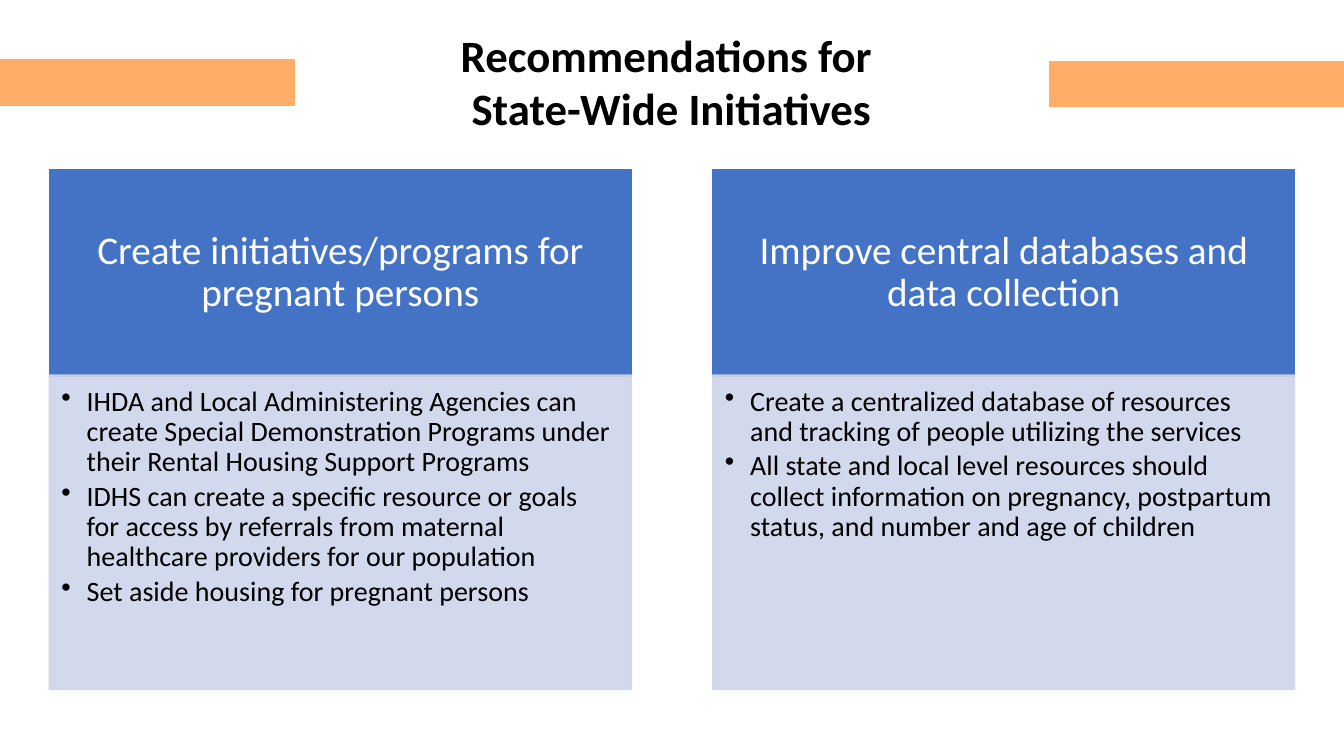
from dataclasses import dataclass

from lxml.etree import SubElement
from pptx import Presentation
from pptx.dml.color import RGBColor
from pptx.enum.shapes import MSO_SHAPE
from pptx.enum.text import MSO_ANCHOR, MSO_AUTO_SIZE, PP_ALIGN
from pptx.oxml.ns import qn
from pptx.util import Inches, Pt

COLORS = {
    "white": "FFFFFF",
    "black": "000000",
    "header": "4472C4",
    "body": "CFD5EA",
    "accent": "FFAD68",
}
FONT = "Calibri"
COLUMN_W, HEADER_H, BODY_H = 5.77, 2.05, 3.12
HEADER_TOP, BODY_TOP = 1.68, 3.72
BAR_W, BAR_H = 2.92, 0.45


@dataclass
class Column:
    left: float
    heading: str
    bullets: list[str]


@dataclass
class Bar:
    left: float
    top: float


COLUMNS = [
    Column(0.49, "Create initiatives/programs for pregnant persons", [
        "IHDA and Local Administering Agencies can create Special Demonstration "
        "Programs under their Rental Housing Support Programs",
        "IDHS can create a specific resource or goals for access by referrals "
        "from maternal healthcare providers for our population",
        "Set aside housing for pregnant persons",
    ]),
    Column(7.07, "Improve central databases and data collection", [
        "Create a centralized database of resources and tracking of people "
        "utilizing the services",
        "All state and local level resources should collect information on "
        "pregnancy, postpartum status, and number and age of children",
    ]),
]
BARS = [Bar(0, 0.59), Bar(10.41, 0.61)]


def rgb(name: str) -> RGBColor:
    return RGBColor.from_string(COLORS[name])


def add_rect(slide, left: float, top: float, width: float, height: float,
             color: str, opacity: int = 100):
    sp = slide.shapes.add_shape(MSO_SHAPE.RECTANGLE, Inches(left), Inches(top),
                                Inches(width), Inches(height))
    sp.shadow.inherit = False
    sp.fill.solid()
    sp.fill.fore_color.rgb = rgb(color)
    sp.line.color.rgb = rgb(color)
    sp.line.width = Pt(1)
    if opacity < 100:
        for clr in sp._element.spPr.iter(qn("a:srgbClr")):
            SubElement(clr, qn("a:alpha")).set("val", str(opacity * 1000))
    return sp


def set_frame(tf, anchor: MSO_ANCHOR, insets: tuple[float, float, float, float]) -> None:
    tf.word_wrap = True
    tf.auto_size = MSO_AUTO_SIZE.NONE
    tf.vertical_anchor = anchor
    tf.margin_left, tf.margin_top, tf.margin_right, tf.margin_bottom = map(Inches, insets)


def add_paragraphs(tf, texts: list[str], size: int, color: str, align: PP_ALIGN,
                   spacing: float, bold: bool = False, bullet: bool = False) -> None:
    for i, text in enumerate(texts):
        p = tf.paragraphs[0] if i == 0 else tf.add_paragraph()
        p.alignment = align
        p.line_spacing = spacing
        if bullet:
            p.space_after = Pt(3)
            pPr = p._p.get_or_add_pPr()
            pPr.set("marL", str(Inches(0.25)))
            pPr.set("indent", str(Inches(-0.25)))
            SubElement(pPr, qn("a:buChar")).set("char", "•")
        r = p.add_run()
        r.text = text
        r.font.name = FONT
        r.font.size = Pt(size)
        r.font.bold = bold
        r.font.color.rgb = rgb(color)


def add_title(slide) -> None:
    title = slide.shapes.title
    title.left, title.top = Inches(2.92), Inches(0.22)
    title.width, title.height = Inches(7.48), Inches(1.18)
    title.fill.solid()
    title.fill.fore_color.rgb = rgb("white")
    set_frame(title.text_frame, MSO_ANCHOR.TOP, (0.1, 0.05, 0.1, 0.05))
    add_paragraphs(title.text_frame, ["Recommendations for ", "State-Wide Initiatives"],
                   32, "black", PP_ALIGN.CENTER, 1.0, bold=True)


def add_column(slide, col: Column) -> None:
    header = add_rect(slide, col.left, HEADER_TOP, COLUMN_W, HEADER_H, "header")
    set_frame(header.text_frame, MSO_ANCHOR.MIDDLE, (0.22, 0.12, 0.22, 0.12))
    add_paragraphs(header.text_frame, [col.heading], 28, "white", PP_ALIGN.CENTER, 0.9)

    body = add_rect(slide, col.left, BODY_TOP, COLUMN_W, BODY_H, "body", opacity=90)
    set_frame(body.text_frame, MSO_ANCHOR.TOP, (0.12, 0.12, 0.16, 0.17))
    add_paragraphs(body.text_frame, col.bullets, 20, "black", PP_ALIGN.LEFT, 0.9,
                   bullet=True)


def main() -> None:
    prs = Presentation()
    prs.slide_width, prs.slide_height = Inches(13.33), Inches(7.5)
    s = prs.slides.add_slide(prs.slide_layouts[5])

    # Title
    add_title(s)

    # Recommendation columns
    for col in COLUMNS:
        add_column(s, col)

    # Accent bars beside the title
    for bar in BARS:
        add_rect(s, bar.left, bar.top, BAR_W, BAR_H, "accent")

    prs.save("out.pptx")


if __name__ == "__main__":
    main()
